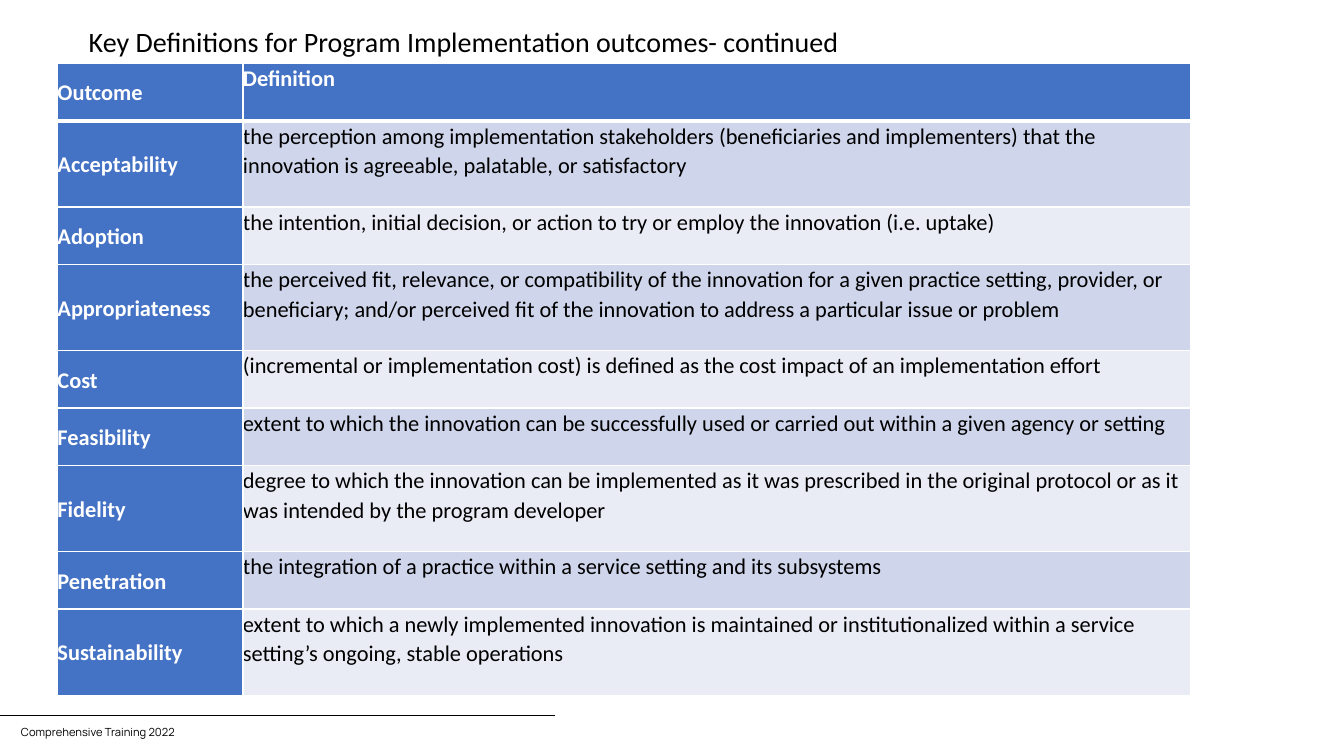
from lxml import etree
from pptx import Presentation, util as u
from pptx.dml.color import RGBColor
from pptx.enum import shapes, text
from pptx.oxml import parse_xml
from pptx.oxml.ns import nsdecls, qn

COLS, ROWS = 1333, 750
WIDE, HIGH = u.Inches(13.33), u.Inches(7.5)
HUES = {"ink": "000000", "white": "FFFFFF", "head": "4472C4",
        "dark": "CFD5EA", "light": "E9EBF5"}
SHORT, TALL = 57, 85.5
TERMS = [
    ("Acceptability", TALL,
     "the perception among implementation stakeholders (beneficiaries and implementers) "
     "that the innovation is agreeable, palatable, or satisfactory"),
    ("Adoption", SHORT,
     "the intention, initial decision, or action to try or employ the innovation (i.e. uptake)"),
    ("Appropriateness", TALL,
     "the perceived fit, relevance, or compatibility of the innovation for a given practice "
     "setting, provider, or beneficiary; and/or perceived fit of the innovation to address "
     "a particular issue or problem"),
    ("Cost", SHORT,
     "(incremental or implementation cost) is defined as the cost impact of an "
     "implementation effort"),
    ("Feasibility", SHORT,
     "extent to which the innovation can be successfully used or carried out within a "
     "given agency or setting"),
    ("Fidelity", TALL,
     "degree to which the innovation can be implemented as it was prescribed in the original "
     "protocol or as it was intended by the program developer"),
    ("Penetration", SHORT,
     "the integration of a practice within a service setting and its subsystems"),
    ("Sustainability", TALL,
     "extent to which a newly implemented innovation is maintained or institutionalized "
     "within a service setting’s ongoing, stable operations"),
]


def across(n):
    """Return the width of n grid columns."""
    return int(WIDE * n / COLS)


def down(n):
    """Return the height of n grid rows."""
    return int(HIGH * n / ROWS)


def area(x, y, w, h):
    """Return a grid area as left, top, width and height."""
    return across(x), down(y), across(w), down(h)


def hue(key):
    """Return the named colour."""
    return RGBColor.from_string(HUES[key])


def write(frame, words, size, ink="ink", font="Calibri", bold=False, space=1.0):
    """Write one left-aligned run into a text frame."""
    frame.word_wrap = True
    para = frame.paragraphs[0]
    para.alignment = text.PP_ALIGN.LEFT
    para.line_spacing = space
    run = para.add_run()
    run.text = words
    run.font.name, run.font.size, run.font.bold = font, u.Pt(size), bold
    run.font.color.rgb = hue(ink)


def edge(cell, base):
    """Draw white borders around a cell, with its own bottom width."""
    props = cell._tc.get_or_add_tcPr()
    for spot, side in enumerate("LRTB"):
        width = u.Pt(base if side == "B" else 1)
        props.insert(spot, parse_xml(
            f'<a:ln{side} {nsdecls("a")} w="{width}"><a:solidFill>'
            f'<a:srgbClr val="{HUES["white"]}"/></a:solidFill></a:ln{side}>'))


def fill(cell, words, back, head, top, base=1):
    """Fill one table cell with colour, borders and words."""
    cell.margin_left = cell.margin_right = cell.margin_top = cell.margin_bottom = 0
    anchor = text.MSO_ANCHOR
    cell.vertical_anchor = anchor.TOP if top else anchor.MIDDLE
    cell.fill.solid()
    cell.fill.fore_color.rgb = hue(back)
    edge(cell, base)
    write(cell.text_frame, words, 16, "white" if head else "ink", bold=head, space=1.07)


def terms(slide):
    """Add the table of outcomes and their definitions."""
    highs = [SHORT] + [high for _, high, _ in TERMS]
    grid = slide.shapes.add_table(
        len(highs), 2, *area(57, 63, 1124, sum(highs))).table
    for col, width in zip(grid.columns, (184, 940)):
        col.width = across(width)
    for row, high in zip(grid.rows, highs):
        row.height = down(high)
    fill(grid.cell(0, 0), "Outcome", "head", True, False, 3)
    fill(grid.cell(0, 1), "Definition", "head", True, True, 3)
    for row, (name, _, words) in enumerate(TERMS, 1):
        fill(grid.cell(row, 0), name, "head", True, False)
        fill(grid.cell(row, 1), words, "dark" if row % 2 else "light", False, True)


def title(slide, words):
    """Place and format the slide title."""
    head = slide.shapes.title
    head.left, head.top, head.width, head.height = area(78, 23, 1150, 40)
    head.text_frame.auto_size = text.MSO_AUTO_SIZE.NONE
    head.text_frame.vertical_anchor = text.MSO_ANCHOR.MIDDLE
    write(head.text_frame, words, 20, space=0.9)


def footer(slide, words):
    """Add the footer rule and its label."""
    rule = slide.shapes.add_connector(
        shapes.MSO_CONNECTOR.STRAIGHT, 0, down(710), across(550), down(710))
    rule.line.color.rgb = hue("ink")
    rule.line.width = u.Pt(0.5)
    etree.SubElement(rule._element.spPr, qn("a:effectLst"))
    label = slide.shapes.add_textbox(*area(11, 715, 439, 24))
    write(label.text_frame, words, 8, font="Manrope")


def main():
    """Build and save the slide."""
    deck = Presentation()
    deck.slide_width, deck.slide_height = WIDE, HIGH
    slide = deck.slides.add_slide(deck.slide_layouts.get_by_name("Title Only"))
    footer(slide, "Comprehensive Training 2022")
    terms(slide)
    title(slide, "Key Definitions for Program Implementation outcomes- continued")
    deck.save("out.pptx")


if __name__ == "__main__":
    main()
